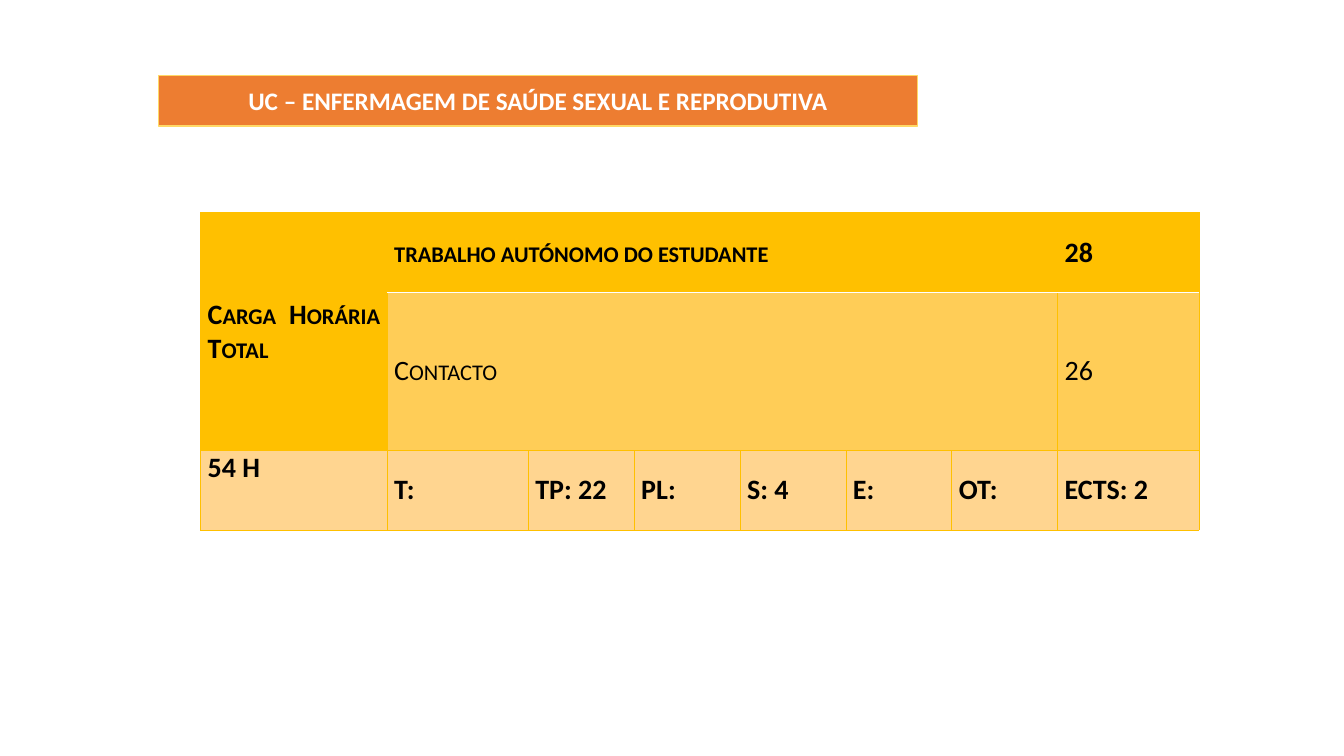
import pptx
import pptx.util
import pptx.oxml
import pptx.oxml.ns
from pptx.dml.color import RGBColor
from pptx.enum.text import MSO_ANCHOR, MSO_AUTO_SIZE, PP_ALIGN

# Content: (row, column, rows spanned, columns spanned, text, bold, small caps)
HEADING = "UC – ENFERMAGEM DE SAÚDE SEXUAL E REPRODUTIVA"
WORKLOAD = [
    (0, 0, 2, 1, "Carga Horária Total", True, True),
    (0, 1, 1, 6, "trabalho autónomo do estudante", True, True),
    (0, 7, 1, 1, "28", True, False),
    (1, 1, 1, 6, "Contacto", False, True),
    (1, 7, 1, 1, "26", False, False),
]
HOURS = ["54 H", "T:", "TP: 22", "PL:", "S: 4", "E:", "OT:", "ECTS: 2"]
WORKLOAD += [(2, column, 1, 1, text, True, False) for column, text in enumerate(HOURS)]

# Layout in px, 100 to the inch
PX = 9144
SLIDE_SIZE = (1333, 750)
HEADING_BOX = (157, 75, 753, 50)
TABLE_CORNER = (199, 211)
COLUMN_WIDTHS = [185, 140] + [105] * 5 + [140]
ROW_HEIGHTS = [79, 157, 79]
CELL_INSET = 7

FONT = "Calibri"
ORANGE = RGBColor(0xED, 0x7D, 0x31)
PALE_GOLD = RGBColor(0xFF, 0xD9, 0x66)
GOLD = RGBColor(0xFF, 0xC0, 0x00)
CONTACT_FILL = RGBColor(0xFF, 0xCD, 0x57)
HOURS_FILL = RGBColor(0xFF, 0xD5, 0x90)
WHITE = RGBColor(0xFF, 0xFF, 0xFF)
BLACK = RGBColor(0x00, 0x00, 0x00)
ROW_FILLS = [GOLD, CONTACT_FILL, HOURS_FILL]


def format_text(paragraph, size, color, bold):
    for run in paragraph.runs:
        run.font.name = FONT
        run.font.size = pptx.util.Pt(size)
        run.font.color.rgb = color
        run.font.bold = bold


def add_border(cell, side, color, width):
    properties = cell._tc.get_or_add_tcPr()
    properties.append(pptx.oxml.parse_xml(
        f'<a:ln{side} {pptx.oxml.ns.nsdecls("a")} w="{pptx.util.Pt(width)}">'
        f'<a:solidFill><a:srgbClr val="{color}"/></a:solidFill></a:ln{side}>'))


def add_heading(slide):
    heading = slide.shapes.title
    heading.left, heading.top, heading.width, heading.height = [v * PX for v in HEADING_BOX]
    heading.fill.solid()
    heading.fill.fore_color.rgb = ORANGE
    heading.line.color.rgb = PALE_GOLD
    heading.line.width = pptx.util.Pt(1)
    frame = heading.text_frame
    frame.text = HEADING
    frame.word_wrap = True
    frame.auto_size = MSO_AUTO_SIZE.NONE
    frame.vertical_anchor = MSO_ANCHOR.MIDDLE
    frame.paragraphs[0].alignment = PP_ALIGN.CENTER
    format_text(frame.paragraphs[0], 18, WHITE, True)


def style_cell(cell, row, column):
    # A white rule separates the first row, beyond the first column
    edges = {"L": (GOLD, 0.5), "R": (GOLD, 0.5), "T": (GOLD, 0.5), "B": (GOLD, 0.5)}
    if column > 0 and row < 2:
        edges["B" if row == 0 else "T"] = (WHITE, 1)
    for side, (color, width) in edges.items():
        if side in "TB" or not cell.is_spanned:
            add_border(cell, side, color, width)
    cell.fill.solid()
    cell.fill.fore_color.rgb = GOLD if column == 0 and row < 2 else ROW_FILLS[row]


def add_workload(slide):
    left, top = TABLE_CORNER
    box = (left, top, sum(COLUMN_WIDTHS), sum(ROW_HEIGHTS))
    table = slide.shapes.add_table(
        len(ROW_HEIGHTS), len(COLUMN_WIDTHS), *[v * PX for v in box]).table
    table.first_row = table.horz_banding = False
    for column, width in zip(table.columns, COLUMN_WIDTHS):
        column.width = width * PX
    for row, height in zip(table.rows, ROW_HEIGHTS):
        row.height = height * PX

    # Merged cells and text
    for row, column, rows, columns, text, bold, small_caps in WORKLOAD:
        cell = table.cell(row, column)
        if rows * columns > 1:
            cell.merge(table.cell(row + rows - 1, column + columns - 1))
        cell.margin_left = cell.margin_right = CELL_INSET * PX
        cell.margin_top = cell.margin_bottom = 0
        cell.vertical_anchor = MSO_ANCHOR.TOP if text == HOURS[0] else MSO_ANCHOR.MIDDLE
        cell.text_frame.text = text
        paragraph = cell.text_frame.paragraphs[0]
        paragraph.alignment = PP_ALIGN.JUSTIFY
        paragraph.space_before = paragraph.space_after = pptx.util.Pt(2)
        format_text(paragraph, 20, BLACK, bold)
        if small_caps:
            paragraph.runs[0].font._element.set("cap", "small")

    # Borders and fills
    for row in range(len(ROW_HEIGHTS)):
        for column in range(len(COLUMN_WIDTHS)):
            style_cell(table.cell(row, column), row, column)


def main():
    deck = pptx.Presentation()
    deck.slide_width, deck.slide_height = [v * PX for v in SLIDE_SIZE]
    slide = deck.slides.add_slide(deck.slide_layouts[5])
    add_heading(slide)
    add_workload(slide)
    deck.save("out.pptx")


if __name__ == "__main__":
    main()
